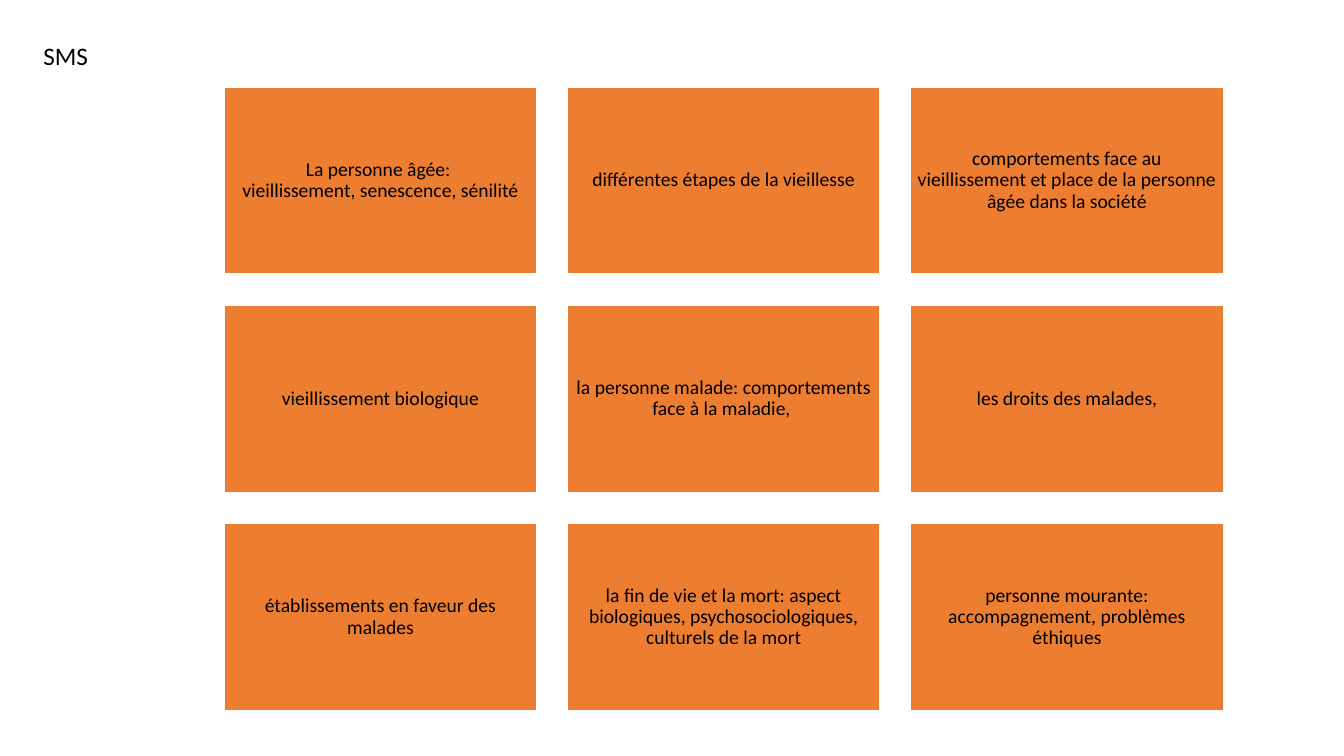
"""Build the SMS slide: a title and a three-by-three grid of topics."""
from pptx import Presentation
from pptx.dml.color import RGBColor
from pptx.enum.shapes import MSO_SHAPE
from pptx.enum.text import MSO_ANCHOR, MSO_AUTO_SIZE, PP_ALIGN
from pptx.util import Cm, Pt

ORANGE = RGBColor(0xED, 0x7D, 0x31)
WHITE = RGBColor(0xFF, 0xFF, 0xFF)
BLACK = RGBColor(0x00, 0x00, 0x00)

TOPICS = [
    "La personne âgée: \nvieillissement, senescence, sénilité",
    "différentes étapes de la vieillesse",
    "comportements face au vieillissement et place de la personne âgée dans la société",
    "vieillissement biologique",
    "la personne malade: comportements face à la maladie, ",
    "les droits des malades,",
    "établissements en faveur des malades",
    "la fin de vie et la mort: aspect biologiques, psychosociologiques, culturels de la mort",
    "personne mourante: accompagnement, problèmes éthiques",
]
COLS = 3
LEFT, TOP = 5.65, 2.19
WIDTH, HEIGHT = 7.88, 4.72
STEP_X, STEP_Y = 8.65, 5.5

SIDES = ("margin_left", "margin_top", "margin_right", "margin_bottom")
HEAD = {"word_wrap": True, "auto_size": MSO_AUTO_SIZE.NONE,
        "vertical_anchor": MSO_ANCHOR.TOP}
BODY = {"word_wrap": True, "vertical_anchor": MSO_ANCHOR.MIDDLE,
        **dict.fromkeys(SIDES, Cm(0.15))}


def apply(item, values):
    for name, value in values.items():
        setattr(item, name, value)


def write(shape, text, size, frame, para):
    apply(shape.text_frame, frame)
    line = shape.text_frame.paragraphs[0]
    line.text = text
    apply(line, para)
    apply(line.font, {"name": "Calibri", "size": Pt(size), "bold": False})
    line.font.color.rgb = BLACK


deck = Presentation()
apply(deck, {"slide_width": Cm(33.87), "slide_height": Cm(19.05)})
slide = deck.slides.add_slide(deck.slide_layouts[5])

title = slide.shapes.title
apply(title, {"left": Cm(0.84), "top": Cm(0.89),
              "width": Cm(8.38), "height": Cm(1.02)})
write(title, "SMS", 18, HEAD, {"alignment": PP_ALIGN.LEFT})

for index, topic in enumerate(TOPICS):
    row, col = divmod(index, COLS)
    box = slide.shapes.add_shape(
        MSO_SHAPE.RECTANGLE, Cm(LEFT + col * STEP_X), Cm(TOP + row * STEP_Y),
        Cm(WIDTH), Cm(HEIGHT))
    box.shadow.inherit = False
    box.fill.solid()
    box.fill.fore_color.rgb = ORANGE
    box.line.color.rgb = WHITE
    box.line.width = Pt(1)
    write(box, topic, 14, BODY,
          {"alignment": PP_ALIGN.CENTER, "line_spacing": 0.9})

deck.save("out.pptx")
